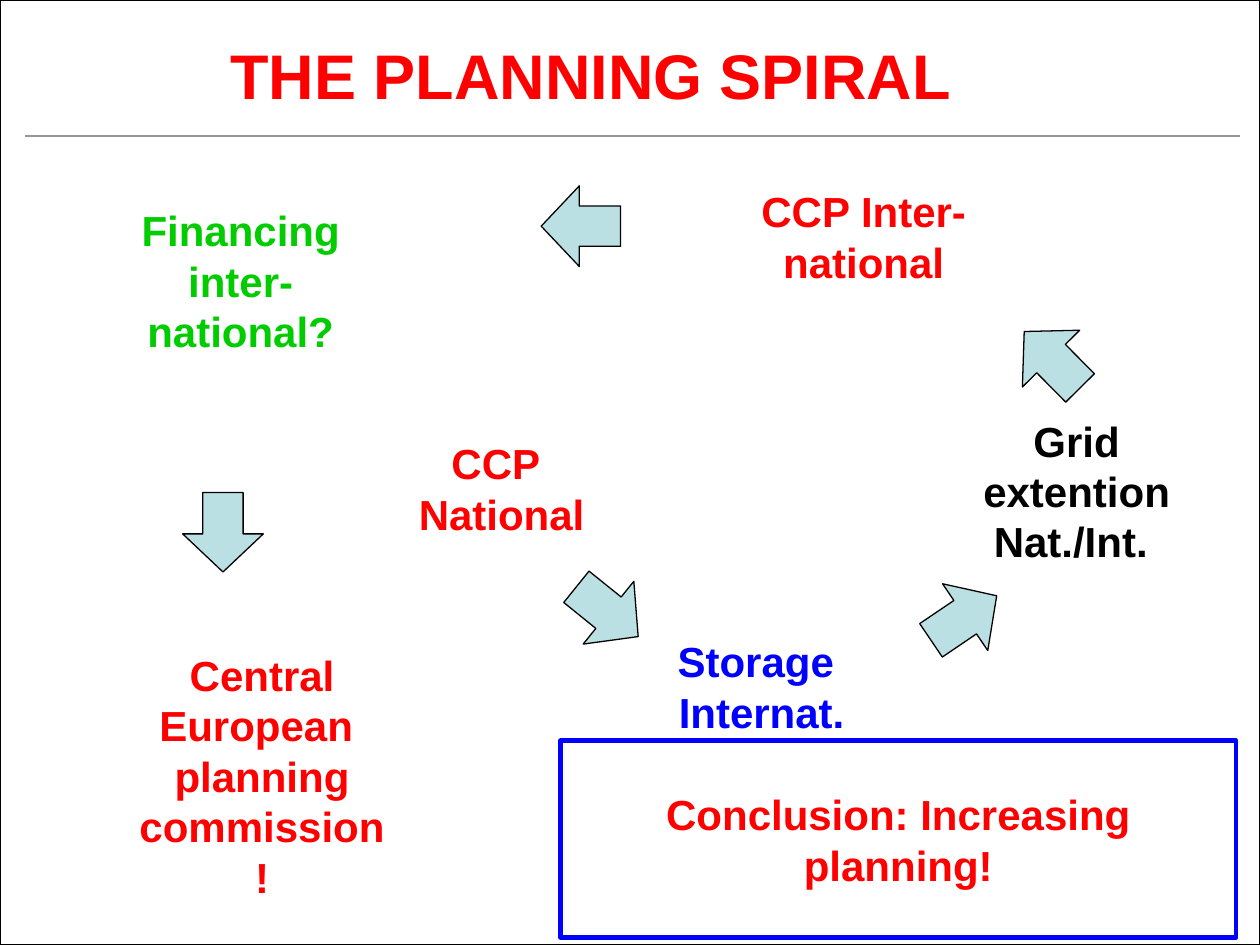
from pptx import Presentation
from pptx import util as u
from pptx.dml.color import RGBColor
from pptx.enum import shapes, text
from pptx.oxml.ns import qn
from lxml import etree

WHITE = RGBColor(0xFF, 0xFF, 0xFF)
BLACK = RGBColor(0, 0, 0)
RED = RGBColor(0xFF, 0, 0)
GREEN = RGBColor(0, 0xCC, 0)
BLUE = RGBColor(0, 0, 0xFF)
GRAY = RGBColor(0x96, 0x96, 0x96)
PALE_BLUE = RGBColor(0xBB, 0xE0, 0xE3)

presentation = Presentation()
presentation.slide_width = u.Inches(10)
presentation.slide_height = u.Inches(7.5)
slide = presentation.slides.add_slide(presentation.slide_layouts[6])


def add_shape(kind, left, top, width, height, fill, line, line_width=0.75):
    shape = slide.shapes.add_shape(
        kind, u.Inches(left), u.Inches(top), u.Inches(width), u.Inches(height))
    shape.shadow.inherit = False
    if fill is None:
        shape.fill.background()
    else:
        shape.fill.solid()
        shape.fill.fore_color.rgb = fill
    shape.line.color.rgb = line
    shape.line.width = u.Pt(line_width)
    return shape


def write(shape, words, color, size=24):
    frame = shape.text_frame
    frame.word_wrap = True
    frame.vertical_anchor = text.MSO_ANCHOR.MIDDLE
    paragraph = frame.paragraphs[0]
    paragraph.text = words
    paragraph.alignment = text.PP_ALIGN.CENTER
    paragraph.font.name = "Arial"
    paragraph.font.size = u.Pt(size)
    paragraph.font.bold = True
    paragraph.font.color.rgb = color


# Page frame and rule under the title
add_shape(shapes.MSO_SHAPE.RECTANGLE, 0, 0, 10, 7.5, WHITE, BLACK)
rule = slide.shapes.add_connector(
    shapes.MSO_CONNECTOR.STRAIGHT,
    u.Inches(0.2), u.Inches(1.08), u.Inches(9.84), u.Inches(1.08))
rule.line.color.rgb = GRAY
rule.line.width = u.Pt(0.75)
etree.SubElement(rule._element.spPr, qn("a:effectLst"))

# Title and stations of the spiral: words, left, top, width, height, color, size
labels = [
    ("THE PLANNING SPIRAL", 0.28, 0.13, 8.82, 0.92, RED, 36),
    ("CCP\n National", 2.95, 3.44, 1.97, 0.87, RED, 24),
    ("Storage  Internat.", 5.06, 5.01, 1.97, 0.87, BLUE, 24),
    ("Grid extention Nat./Int. ", 7.48, 3.46, 2.13, 0.87, BLACK, 24),
    ("CCP Inter-national", 5.87, 1.44, 1.97, 0.87, RED, 24),
    ("Financing inter-national?", 0.75, 1.79, 2.32, 0.87, GREEN, 24),
    ("Central European  planning commission!", 0.98, 5.72, 2.2, 0.87, RED, 24),
]
for words, left, top, width, height, color, size in labels:
    label = slide.shapes.add_textbox(
        u.Inches(left), u.Inches(top), u.Inches(width), u.Inches(height))
    write(label, words, color, size)

# Conclusion box
conclusion = add_shape(
    shapes.MSO_SHAPE.RECTANGLE, 4.45, 5.88, 5.36, 1.56, None, BLUE, 2.75)
write(conclusion, "Conclusion: Increasing planning!", RED)

# Arrows from station to station: left, top, rotation
arrows = [
    (4.5, 4.54, 308.9),
    (7.33, 4.59, 235.9),
    (8.03, 2.54, 135.3),
    (4.29, 1.48, 90),
    (1.45, 3.91, 0),
]
for left, top, rotation in arrows:
    arrow = add_shape(
        shapes.MSO_SHAPE.DOWN_ARROW, left, top, 0.64, 0.63, PALE_BLUE, BLACK)
    arrow.adjustments[0] = 0.5
    arrow.adjustments[1] = 0.48
    arrow.rotation = rotation

presentation.save("out.pptx")
